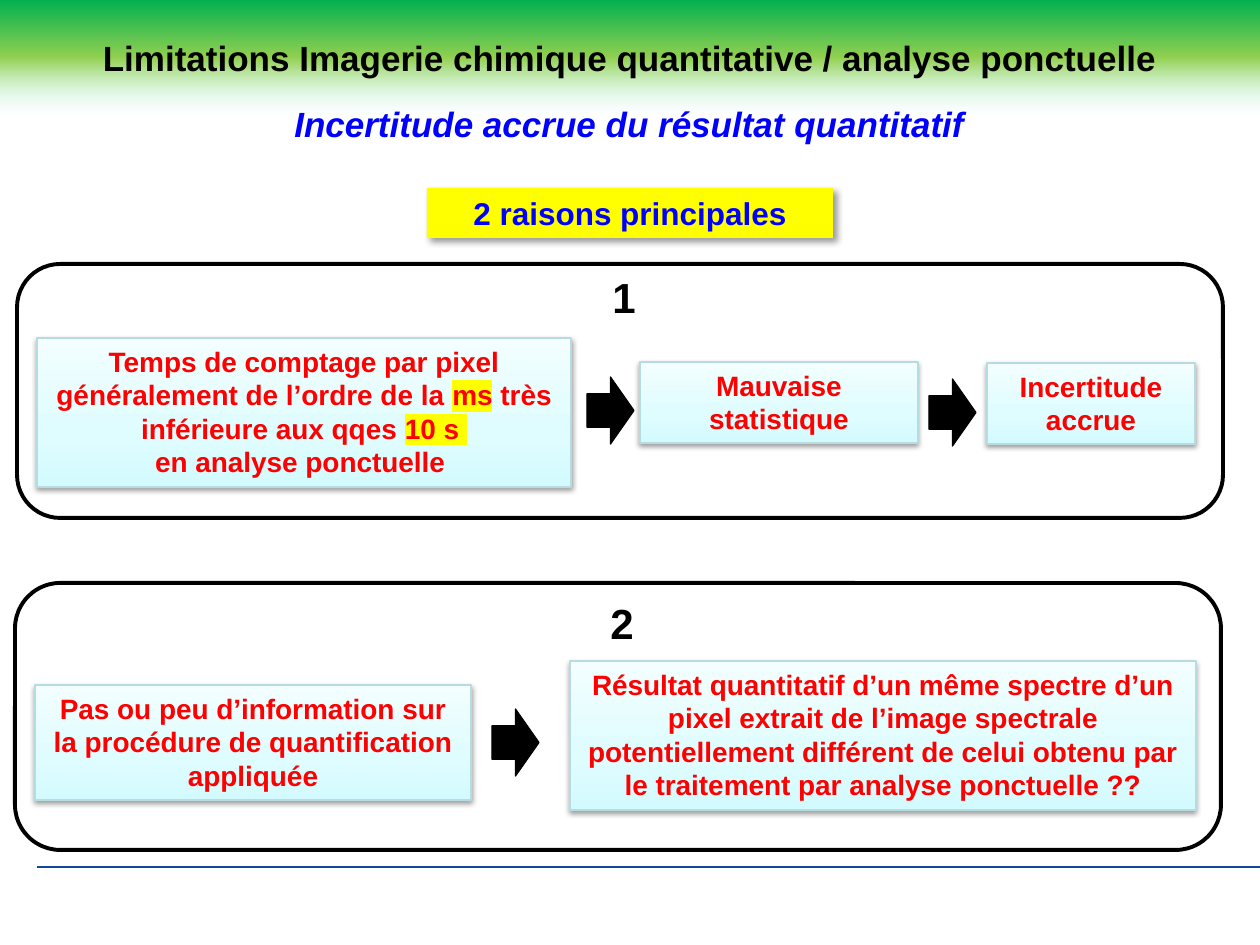
import lxml.etree
import pptx
import pptx.dml.color
import pptx.enum.shapes
import pptx.enum.text
import pptx.oxml
import pptx.oxml.ns
import pptx.util

EMU_PER_PX = 914400 / 126
SHAPES = pptx.enum.shapes.MSO_SHAPE
ALIGN = pptx.enum.text.PP_ALIGN
ANCHOR = pptx.enum.text.MSO_ANCHOR

BLACK, BLUE, RED, YELLOW = "000000", "0000FF", "FF0000", "FFFF00"
BANNER_STOPS = [(0, "00B050", 100), (50, "92D050", 100), (100, "CCFFFF", 0)]
CARD_STOPS = [(0, "D3FBFF", 100), (35, "DFFCFF", 100), (100, "F2FEFF", 100)]
CARD_SHADOW = (38, 3.1, 1.6, 90)
LABEL_SHADOW = (40, 4, 3, 45)

TITLE = "Limitations Imagerie chimique quantitative / analyse ponctuelle"
SUBTITLE = "Incertitude accrue du résultat quantitatif"
LABEL = "2 raisons principales"

REASONS = [
    {
        "number": "1", "number_box": (600, 265, 49, 63),
        "frame": (17, 264, 1206, 254),
        "cards": [
            ((37, 338, 534, 149), [
                [("Temps de comptage par pixel généralement de l’ordre de la ", None),
                 ("ms", YELLOW), (" très inférieure aux qqes ", None), ("10 s ", YELLOW)],
                [("en analyse ponctuelle ", None)]]),
            ((640, 362, 278, 81), [[("Mauvaise statistique", None)]]),
            ((987, 363, 208, 81), [[("Incertitude accrue", None)]]),
        ],
        "arrows": [(587, 377), (929, 379)],
    },
    {
        "number": "2", "number_box": (598, 591, 49, 86),
        "frame": (15, 583, 1206, 267),
        "cards": [
            ((35, 685, 436, 115), [
                [("Pas ou peu d’information sur la procédure de quantification appliquée", None)]]),
            ((570, 661, 626, 149), [
                [("Résultat quantitatif d’un même spectre d’un pixel extrait de l’image "
                  "spectrale potentiellement différent de celui obtenu par le traitement "
                  "par analyse ponctuelle ??", None)]]),
        ],
        "arrows": [(492, 709)],
    },
]


def px(value):
    return pptx.util.Emu(round(value * EMU_PER_PX))


def color(value):
    return pptx.dml.color.RGBColor.from_string(value)


def add_child(parent, tag, **attributes):
    child = lxml.etree.SubElement(parent, pptx.oxml.ns.qn(tag))
    for name, value in attributes.items():
        child.set(name, str(value))
    return child


def add_color(parent, value, opacity):
    element = add_child(parent, "a:srgbClr", val=value)
    if opacity < 100:
        add_child(element, "a:alpha", val=opacity * 1000)


def set_gradient(shape, stops, angle):
    shape.fill.background()
    properties = shape._element.spPr
    gradient = add_child(properties, "a:gradFill", rotWithShape=1)
    stop_list = add_child(gradient, "a:gsLst")
    for position, value, opacity in stops:
        add_color(add_child(stop_list, "a:gs", pos=position * 1000), value, opacity)
    add_child(gradient, "a:lin", ang=angle * 60000, scaled=0)
    properties.replace(properties.find(pptx.oxml.ns.qn("a:noFill")), gradient)


def set_shadow(shape, opacity, blur, distance, angle):
    effects = shape._element.spPr.find(pptx.oxml.ns.qn("a:effectLst"))
    shadow = add_child(effects, "a:outerShdw", blurRad=pptx.util.Pt(blur),
                       dist=pptx.util.Pt(distance), dir=angle * 60000, rotWithShape=0)
    add_color(shadow, BLACK, opacity)


def write_text(shape, paragraphs, size, text_color, italic=False,
               align=ALIGN.CENTER, anchor=ANCHOR.TOP, wrap=True):
    frame = shape.text_frame
    frame.word_wrap = wrap
    frame.vertical_anchor = anchor
    for index, runs in enumerate(paragraphs):
        paragraph = frame.add_paragraph() if index else frame.paragraphs[0]
        paragraph.alignment = align
        for text, highlight in runs:
            run = paragraph.add_run()
            run.text = text
            run.font.size = pptx.util.Pt(size)
            run.font.bold = True
            run.font.italic = italic
            run.font.color.rgb = color(text_color)
            if highlight:
                add_color(add_child(run.font._element, "a:highlight"), highlight, 100)
            run.font.name = "Arial"


def add_shape(shapes, kind, box, fill=None, line=None, line_width=0.75):
    shape = shapes.add_shape(kind, *map(px, box))
    shape.shadow.inherit = False
    if fill:
        shape.fill.solid()
        shape.fill.fore_color.rgb = color(fill)
    else:
        shape.fill.background()
    if line:
        shape.line.color.rgb = color(line)
        shape.line.width = pptx.util.Pt(line_width)
    else:
        shape.line.fill.background()
    return shape


def add_card(shapes, box, paragraphs):
    card = add_shape(shapes, SHAPES.RECTANGLE, box, line="B6DCDF")
    set_gradient(card, CARD_STOPS, 270)
    set_shadow(card, *CARD_SHADOW)
    write_text(card, paragraphs, 16, RED)


def add_reason(slide, reason):
    shapes = slide.shapes.add_group_shape().shapes
    frame = add_shape(shapes, SHAPES.ROUNDED_RECTANGLE, reason["frame"],
                      line=BLACK, line_width=2.25)
    frame.adjustments[0] = 0.17
    for box, paragraphs in reason["cards"]:
        add_card(shapes, box, paragraphs)
    number = shapes.add_textbox(*map(px, reason["number_box"]))
    write_text(number, [[(reason["number"], None)]], 24, BLACK,
               align=ALIGN.LEFT, wrap=False)
    for left, top in reason["arrows"]:
        add_shape(shapes, SHAPES.RIGHT_ARROW, (left, top, 47, 67), BLACK, BLACK)


def main():
    presentation = pptx.Presentation()
    presentation.slide_width = px(1260)
    presentation.slide_height = px(945)
    slide = presentation.slides.add_slide(presentation.slide_layouts[5])

    title = slide.shapes.title
    title.left, title.top, title.width, title.height = map(px, (0, 0, 1260, 116))
    set_gradient(title, BANNER_STOPS, 90)
    write_text(title, [[(TITLE, None)]], 20, BLACK, anchor=ANCHOR.MIDDLE, wrap=False)

    rule = slide.shapes.add_connector(pptx.enum.shapes.MSO_CONNECTOR.STRAIGHT,
                                      *map(px, (37, 867, 1260, 867)))
    rule.line.color.rgb = color("11489C")
    rule.line.width = pptx.util.Pt(0.75)
    add_child(rule._element.spPr, "a:effectLst")

    subtitle = slide.shapes.add_textbox(*map(px, (44, 96, 1171, 55)))
    write_text(subtitle, [[(SUBTITLE, None)]], 20, BLUE, italic=True)

    label = add_shape(slide.shapes, SHAPES.RECTANGLE, (427, 188, 406, 50), YELLOW)
    set_shadow(label, *LABEL_SHADOW)
    write_text(label, [[(LABEL, None)]], 18, BLUE)

    for reason in REASONS:
        add_reason(slide, reason)

    presentation.save("out.pptx")


if __name__ == "__main__":
    main()
